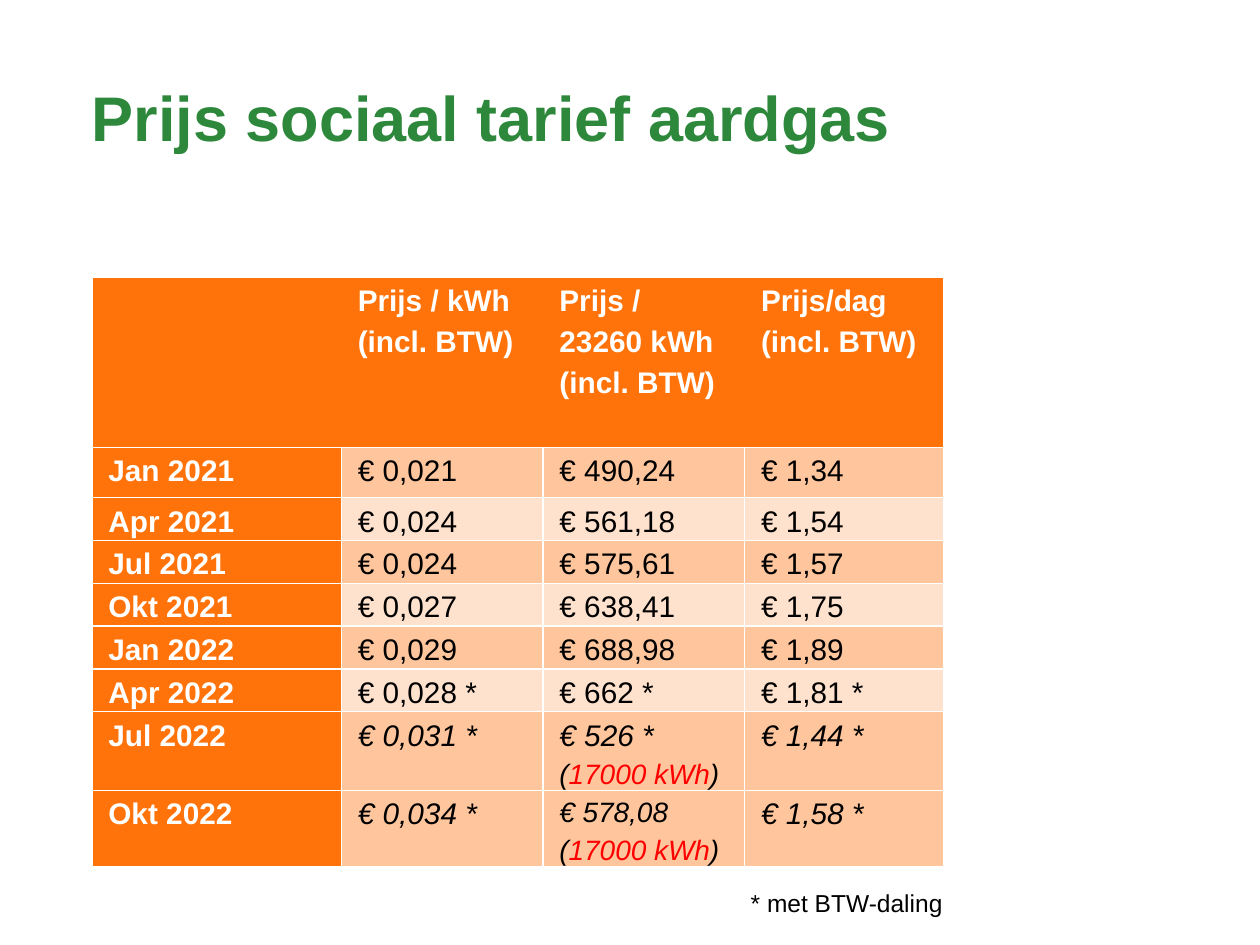
from lxml.etree import SubElement
from pptx import Presentation
from pptx.dml.color import RGBColor
from pptx.enum.text import MSO_ANCHOR, MSO_AUTO_SIZE, PP_ALIGN
from pptx.oxml.ns import qn
from pptx.util import Inches, Pt

HUES = {
    "green": "2D883C", "orange": "FF730A", "peach": "FFC69D", "cream": "FFE2CE",
    "white": "FFFFFF", "black": "000000", "red": "FF0000",
}
HEADS = ["", "Prijs / kWh (incl. BTW)", "Prijs / 23260 kWh (incl. BTW)", "Prijs/dag (incl. BTW)"]
USAGE = [("(", "black", 16), ("17000 kWh", "red", 16), (")", "black", 16)]
PRICES = [
    ["Jan 2021", "€ 0,021", "€ 490,24", "€ 1,34"],
    ["Apr 2021", "€ 0,024", "€ 561,18", "€ 1,54"],
    ["Jul 2021", "€ 0,024", "€ 575,61", "€ 1,57"],
    ["Okt 2021", "€ 0,027", "€ 638,41", "€ 1,75"],
    ["Jan 2022", "€ 0,029", "€ 688,98", "€ 1,89"],
    ["Apr 2022", "€ 0,028 *", "€ 662 *", "€ 1,81 *"],
    ["Jul 2022", "€ 0,031 *", [[("€ 526 *", "black", 17)], USAGE], "€ 1,44 *"],
    ["Okt 2022", "€ 0,034 *", [[("€ 578,08", "black", 16)], USAGE], "€ 1,58 *"],
]
BANDS = ["peach", "cream"] * 3 + ["peach"] * 2
ITALIC = 7


class Deck:
    """Holds the style and the current slide, laid out on a 100 by 75 grid."""

    def __init__(self):
        """Open a deck with one title slide."""
        self.prs = Presentation()
        self.prs.slide_width, self.prs.slide_height = Inches(10), Inches(7.5)
        self.font = "Arial"
        self.slide = self.prs.slides.add_slide(self.prs.slide_layouts[5])

    def grid(self, *units):
        """Turn grid units into lengths."""
        return [round(self.prs.slide_width * unit / 100) for unit in units]

    def text(self, frame, lines, bold=False, slant=False, space=None):
        """Fill a text frame with lines of (words, hue, size) runs."""
        for at, line in enumerate(lines):
            para = frame.add_paragraph() if at else frame.paragraphs[0]
            para.line_spacing = space
            para.alignment = PP_ALIGN.LEFT
            for words, hue, size in line:
                run = para.add_run()
                run.text = words
                font = run.font
                font.name, font.size = self.font, Pt(size)
                font.bold, font.italic = bold, slant
                font.color.rgb = RGBColor.from_string(HUES[hue])

    def title(self, words, box):
        """Move and fill the title placeholder."""
        shape = self.slide.shapes.title
        shape.left, shape.top, shape.width, shape.height = self.grid(*box)
        frame = shape.text_frame
        frame.margin_left = frame.margin_right = frame.margin_top = frame.margin_bottom = 0
        frame.vertical_anchor, frame.auto_size = MSO_ANCHOR.TOP, MSO_AUTO_SIZE.NONE
        frame.word_wrap = True
        self.text(frame, [[(words, "green", 36)]], bold=True, space=0.86)

    def note(self, words, box):
        """Add a small text box."""
        frame = self.slide.shapes.add_textbox(*self.grid(*box)).text_frame
        frame.word_wrap = True
        self.text(frame, [[(words, "black", 14)]])

    def edge(self, cell, sides):
        """Draw white borders on the given sides and none on the others."""
        props = cell._tc.get_or_add_tcPr()
        for side in "LRTB":
            line = SubElement(props, qn(f"a:ln{side}"), w=str(Pt(1)))
            if side in sides:
                fill = SubElement(line, qn("a:solidFill"))
                SubElement(fill, qn("a:srgbClr"), val=HUES["white"])
            else:
                SubElement(line, qn("a:noFill"))

    def cell(self, cell, words, fill, hue, sides="LRTB", **style):
        """Fill one table cell, given plain words or lines of runs."""
        self.edge(cell, sides)
        cell.fill.solid()
        cell.fill.fore_color.rgb = RGBColor.from_string(HUES[fill])
        cell.margin_left = cell.margin_right = Inches(0.13)
        cell.margin_top = cell.margin_bottom = 0
        if words:
            lines = [[(words, hue, 17)]] if isinstance(words, str) else words
            self.text(cell.text_frame, lines, space=1.22, **style)

    def table(self, spot, cols, rows):
        """Add the price table with its header row and month column."""
        size = self.grid(*spot, sum(cols), sum(rows))
        table = self.slide.shapes.add_table(len(rows), len(cols), *size).table
        for col, wide in zip(table.columns, self.grid(*cols)):
            col.width = wide
        for row, high in zip(table.rows, self.grid(*rows)):
            row.height = high
        last = len(cols) - 1
        for x, words in enumerate(HEADS):
            sides = "TB" + "L" * (x == 0) + "R" * (x == last)
            self.cell(table.cell(0, x), words, "orange", "white", sides, bold=True)
        for y, (band, (month, *values)) in enumerate(zip(BANDS, PRICES), 1):
            self.cell(table.cell(y, 0), month, "orange", "white", bold=True)
            for x, words in enumerate(values, 1):
                self.cell(table.cell(y, x), words, band, "black", slant=y >= ITALIC)


def main():
    """Build and save the slide."""
    deck = Deck()
    deck.title("Prijs sociaal tarief aardgas", (7.3, 7.1, 67.7, 11))
    deck.table((7.3, 22), [19.8, 16, 16, 15.8], [13.5, 4] + [3.4] * 7)
    deck.note("* met BTW-daling", (58.6, 70, 31.6, 3.4))
    deck.prs.save("out.pptx")


if __name__ == "__main__":
    main()
